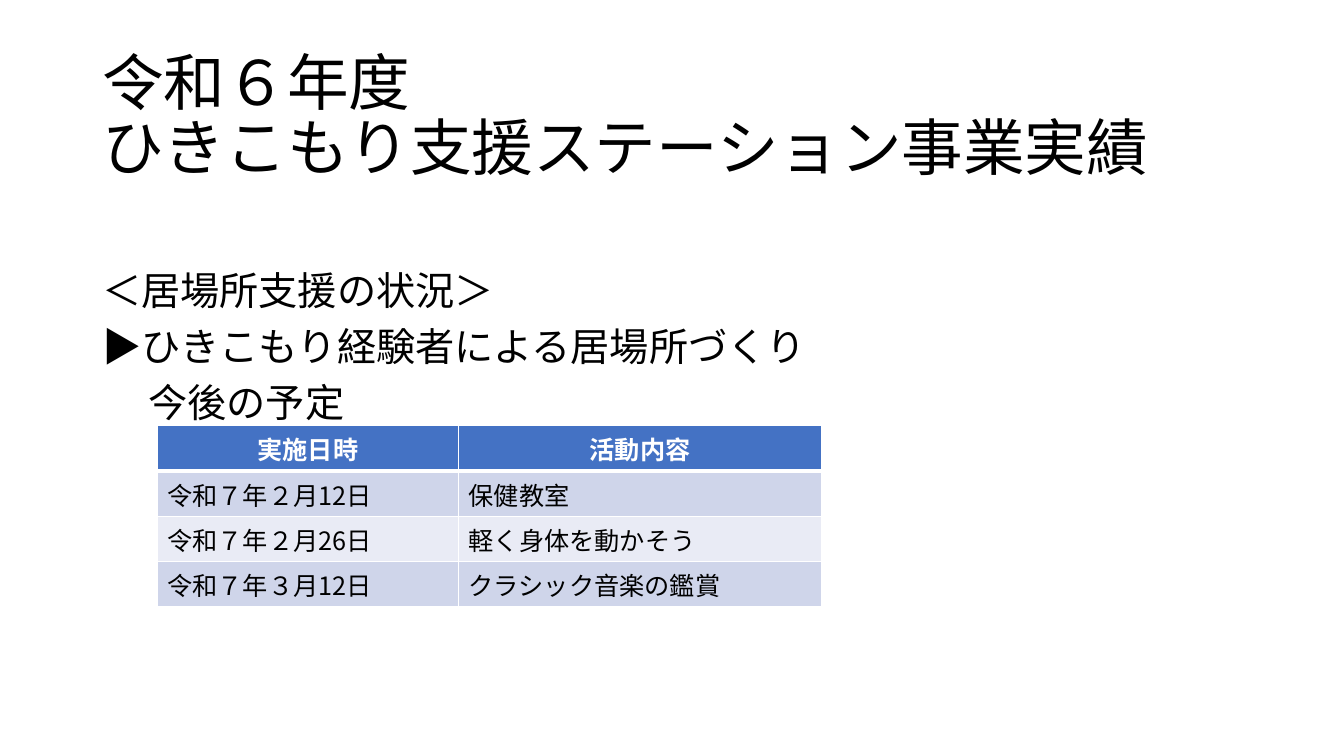
from dataclasses import dataclass

from lxml.etree import SubElement
from pptx import Presentation
from pptx.dml.color import RGBColor as RGB
from pptx.enum.text import PP_ALIGN as ALIGN
from pptx.oxml import parse_xml
from pptx.oxml.ns import nsdecls, qn
from pptx.util import Pt


@dataclass(frozen=True)
class Theme:
    font: str = "Noto Sans CJK JP"
    text: str = "000000"
    light: str = "FFFFFF"
    header: str = "4472C4"
    bands: tuple = ("CFD5EA", "E9EBF5")
    title_size: float = 44
    body_size: float = 28
    table_size: float = 18


THEME = Theme()
TITLE = "令和６年度\vひきこもり支援ステーション事業実績"
# Each line with its left indent in points
BODY = [
    ("＜居場所支援の状況＞", 0),
    ("▶ひきこもり経験者による居場所づくり", 0),
    ("今後の予定", 33),
]
SCHEDULE = [
    ("実施日時", "活動内容"),
    ("令和７年２月12日", "保健教室"),
    ("令和７年２月26日", "軽く身体を動かそう"),
    ("令和７年３月12日", "クラシック音楽の鑑賞"),
]


def style(p, size, color, bold=False):
    """Set the paragraph font for both Latin and East Asian text."""
    f = p.font
    f.name, f.size, f.bold = THEME.font, Pt(size), bold
    f.color.rgb = RGB.from_string(color)
    defaults = p._p.pPr.find(qn("a:defRPr"))
    SubElement(defaults, qn("a:ea"), typeface=THEME.font)


def add_text_frame(slide, box, margin_top):
    tf = slide.shapes.add_textbox(*map(Pt, box)).text_frame
    tf.word_wrap = True
    tf.margin_top = Pt(margin_top)
    return tf


def add_title(slide, box):
    p = add_text_frame(slide, box, 9.3).paragraphs[0]
    p.text = TITLE
    p.line_spacing = Pt(46.4)
    style(p, THEME.title_size, THEME.text)


def add_body(slide, box):
    tf = add_text_frame(slide, box, 49.7)
    for i, (text, indent) in enumerate(BODY):
        p = tf.add_paragraph() if i else tf.paragraphs[0]
        p.text = text
        p.line_spacing, p.space_after = Pt(30), Pt(10)
        style(p, THEME.body_size, THEME.text)
        p._p.pPr.set("marL", str(Pt(indent)))


def set_borders(cell, **widths):
    """Draw the L, R, T and B edges, 1 pt unless a width is given."""
    tc_pr = cell._tc.get_or_add_tcPr()
    for i, side in enumerate("LRTB"):
        tc_pr.insert(i, parse_xml(
            f'<a:ln{side} {nsdecls("a")} w="{Pt(widths.get(side, 1))}">'
            f'<a:solidFill><a:srgbClr val="{THEME.light}"/></a:solidFill>'
            f'</a:ln{side}>'))


def add_schedule(slide, box):
    left, top, width, height = box
    table = slide.shapes.add_table(
        len(SCHEDULE), len(SCHEDULE[0]), *map(Pt, box)).table
    date_width = 215.3
    table.columns[0].width = Pt(date_width)
    table.columns[1].width = Pt(width - date_width)
    for r, row in enumerate(SCHEDULE):
        table.rows[r].height = Pt(height / len(SCHEDULE))
        is_header = r == 0
        fill = THEME.header if is_header else THEME.bands[(r - 1) % 2]
        for c, text in enumerate(row):
            cell = table.cell(r, c)
            cell.fill.solid()
            cell.fill.fore_color.rgb = RGB.from_string(fill)
            set_borders(cell, B=3 if is_header else 1, T=3 if r == 1 else 1)
            p = cell.text_frame.paragraphs[0]
            p.text = text
            p.alignment = ALIGN.CENTER if is_header else ALIGN.LEFT
            style(p, THEME.table_size,
                  THEME.light if is_header else THEME.text, is_header)


def main():
    prs = Presentation()
    prs.slide_width, prs.slide_height = Pt(960), Pt(540)
    slide = prs.slides.add_slide(prs.slide_layouts[6])
    add_title(slide, (66, 28.8, 828, 104.4))
    add_body(slide, (66, 144, 828, 342.7))
    add_schedule(slide, (112.3, 304, 474.5, 129.6))
    prs.save("out.pptx")


if __name__ == "__main__":
    main()
